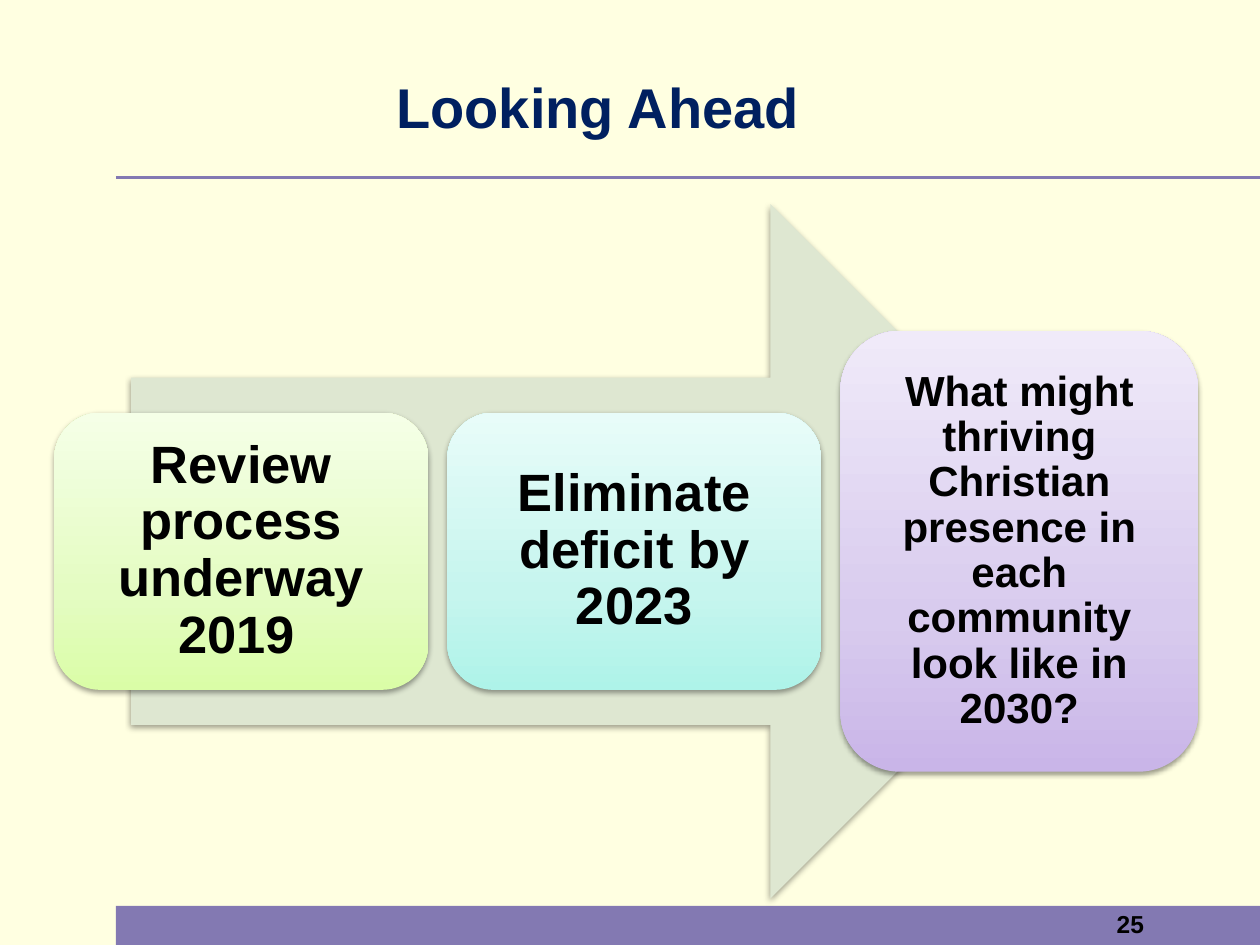
import copy

import pptx
import pptx.dml.color
import pptx.enum.shapes
import pptx.enum.text
import pptx.oxml
import pptx.oxml.ns
import pptx.util

Inches, Pt = pptx.util.Inches, pptx.util.Pt
Shapes = pptx.enum.shapes.MSO_SHAPE
Align = pptx.enum.text.PP_ALIGN
PURPLE = "8379B2"
SHADOW = (
    f'<a:effectLst {pptx.oxml.ns.nsdecls("a")}>'
    '<a:outerShdw blurRad="39400" dist="20300" dir="5400000" rotWithShape="0">'
    '<a:srgbClr val="000000"><a:alpha val="38000"/></a:srgbClr>'
    "</a:outerShdw></a:effectLst>"
)


def rgb(value):
    return pptx.dml.color.RGBColor.from_string(value)


def add_box(slide, preset, box, fill=None):
    shape = slide.shapes.add_shape(preset, *map(Inches, box))
    shape.shadow.inherit = False
    shape.line.fill.background()
    if fill:
        shape.fill.solid()
        shape.fill.fore_color.rgb = rgb(fill)
    return shape


def cast_shadow(shape):
    """Replace the empty effect list with a soft shadow below the shape."""
    properties = shape._element.spPr
    properties.remove(properties.find(pptx.oxml.ns.qn("a:effectLst")))
    properties.append(pptx.oxml.parse_xml(SHADOW))


def fill_upward(shape, colours):
    """Three-stop gradient running from the bottom edge to the top."""
    shape.fill.gradient()
    shape.fill.gradient_angle = 90
    first = shape._element.spPr.find(".//" + pptx.oxml.ns.qn("a:gs"))
    first.addnext(copy.deepcopy(first))
    for stop, position, colour in zip(shape.fill.gradient_stops, (0, 0.35, 1), colours):
        stop.position = position
        stop.color.rgb = rgb(colour)


def write(shape, text, size, align, colour="000000", spacing=None):
    frame = shape.text_frame
    frame.text = text
    frame.word_wrap = True
    frame.vertical_anchor = pptx.enum.text.MSO_ANCHOR.MIDDLE
    paragraph = frame.paragraphs[0]
    paragraph.alignment = align
    paragraph.line_spacing = spacing
    font = paragraph.runs[0].font
    font.name, font.size, font.bold = "Arial", Pt(size), True
    font.color.rgb = rgb(colour)


def add_title(slide, box, text):
    title = slide.shapes.title
    title.left, title.top, title.width, title.height = map(Inches, box)
    write(title, text, 32, Align.CENTER, "002060")


def add_rule(slide, left, right, y):
    rule = slide.shapes.add_connector(
        pptx.enum.shapes.MSO_CONNECTOR.STRAIGHT, *map(Inches, (left, y, right, y)))
    rule.line.color.rgb = rgb(PURPLE)
    rule.line.width = Pt(2)
    rule._element.spPr.append(
        pptx.oxml.parse_xml(f'<a:effectLst {pptx.oxml.ns.nsdecls("a")}/>'))


def add_footer(slide, box, number):
    footer = add_box(slide, Shapes.RECTANGLE, box, PURPLE)
    write(footer, number, 14, Align.RIGHT, spacing=0.8)
    footer.text_frame.margin_right = Inches(0.92)


def add_step(slide, box, text, size, inset, colours):
    step = add_box(slide, Shapes.ROUNDED_RECTANGLE, box)
    fill_upward(step, colours)
    cast_shadow(step)
    write(step, text, size, Align.CENTER, spacing=0.9)
    frame = step.text_frame
    frame.margin_left = frame.margin_right = Inches(inset)
    frame.margin_top = frame.margin_bottom = Inches(inset)


def add_timeline(slide, box):
    """Arrow filling the box, with the three steps centred on its axis."""
    left, top, width, height = box
    cast_shadow(add_box(slide, Shapes.RIGHT_ARROW, box, "DEE7D1"))
    axis = top + height / 2
    steps = [
        ("Review process underway 2019\t", 30, 0.12, 2.97, 2.2,
         ("DAFDA7", "E4FCC2", "F5FFE7")),
        ("Eliminate deficit by 2023", 30, 0.12, 2.97, 2.2,
         ("AEF3E9", "C6F5EE", "E8FCF9")),
        ("What might thriving Christian presence in each community look like in 2030?",
         24, 0.1, 2.84, 3.5, ("C9B5E8", "D8CBEE", "F0EAF9")),
    ]
    gap = 0.15
    step_left = left - 0.61
    for text, size, inset, step_width, step_height, colours in steps:
        step_box = (step_left, axis - step_height / 2, step_width, step_height)
        add_step(slide, step_box, text, size, inset, colours)
        step_left += step_width + gap


def main():
    deck = pptx.Presentation()
    deck.slide_width, deck.slide_height = Inches(10), Inches(7.5)
    slide = deck.slides.add_slide(deck.slide_layouts[5])
    slide.background.fill.solid()
    slide.background.fill.fore_color.rgb = rgb("FFFFE1")
    add_footer(slide, (0.92, 7.19, 9.08, 0.32), "25")
    add_rule(slide, 0.92, 10, 1.41)
    add_title(slide, (0.94, 0.22, 7.61, 1.25), "Looking Ahead")
    add_timeline(slide, (1.04, 1.62, 7.83, 5.51))
    deck.save("out.pptx")


if __name__ == "__main__":
    main()
